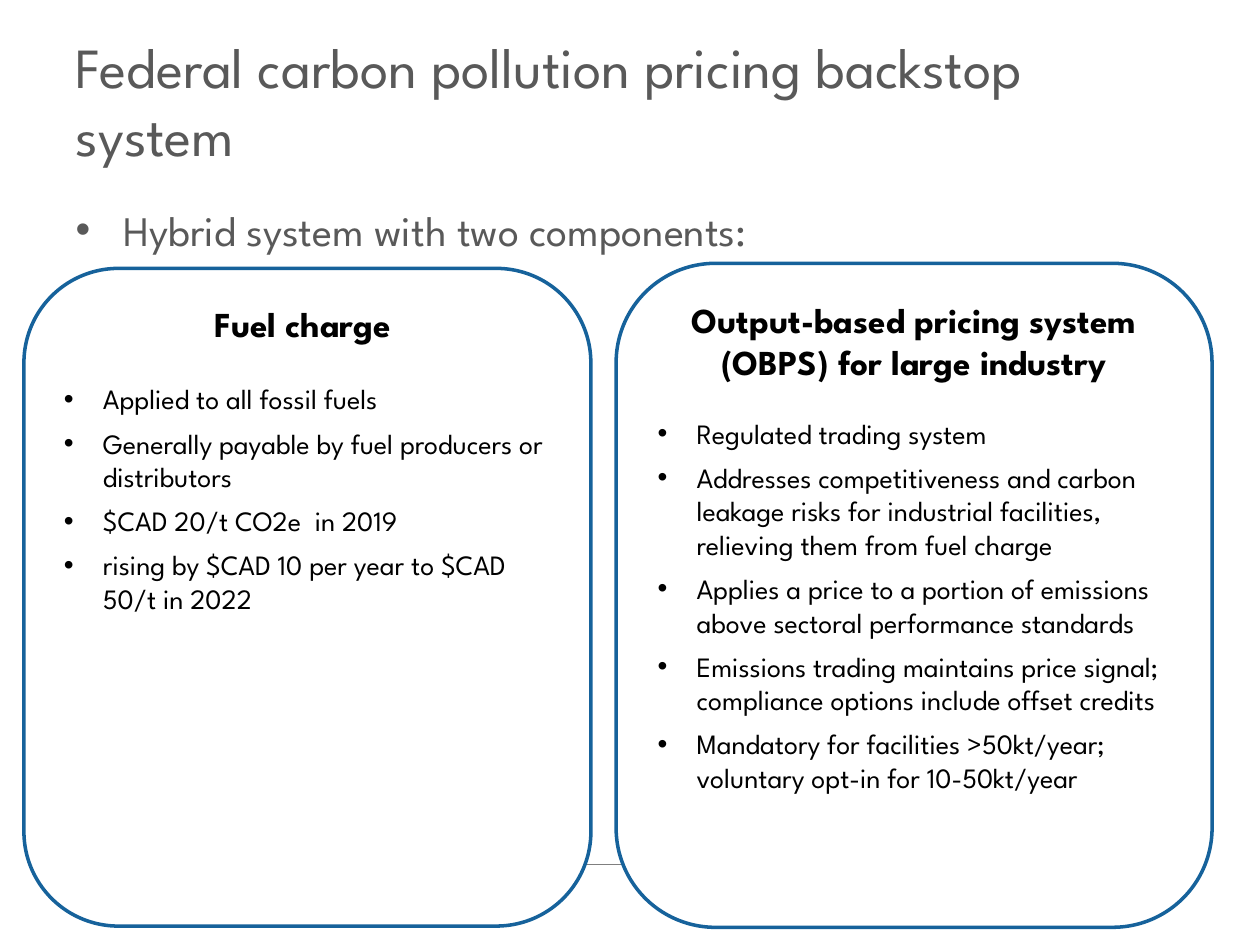
from lxml import etree
from pptx import Presentation
from pptx.dml.color import RGBColor
from pptx.enum.shapes import MSO_CONNECTOR as Link, MSO_SHAPE as Shape
from pptx.enum.text import MSO_ANCHOR as Anchor, MSO_AUTO_SIZE as Fit, PP_ALIGN as Align
from pptx.oxml.ns import qn
from pptx.util import Inches, Pt

FONT = "League Spartan"
GREY = RGBColor(0x59, 0x59, 0x59)
RULE = RGBColor(0x7F, 0x7F, 0x7F)
BLUE = RGBColor(0x16, 0x62, 0x9B)
BLACK = RGBColor(0, 0, 0)
WHITE = RGBColor(0xFF, 0xFF, 0xFF)


def style(para, size, color, bold=False, align=Align.LEFT):
    para.alignment = align
    font = para.font
    font.name, font.size, font.bold = FONT, Pt(size), bold
    font.color.rgb = color


def bullet(para, indent):
    props = para._p.get_or_add_pPr()
    props.set("marL", str(Inches(indent)))
    props.set("indent", str(-Inches(indent)))
    etree.SubElement(props, qn("a:buFont")).set("typeface", "Arial")
    etree.SubElement(props, qn("a:buChar")).set("char", "•")


prs = Presentation()
prs.slide_width, prs.slide_height = Inches(10), Inches(7.5)
slide = prs.slides.add_slide(prs.slide_layouts[1])
shapes = slide.shapes

title = shapes.title
title.left, title.top, title.width, title.height = map(Inches, (0.5, 0.3, 9, 1.08))
frame = title.text_frame
frame.text = "Federal carbon pollution pricing backstop system"
frame.auto_size = Fit.NONE
frame.vertical_anchor = Anchor.BOTTOM
style(frame.paragraphs[0], 32.4, GREY)

body = slide.placeholders[1]
body.left, body.top, body.width, body.height = map(Inches, (0.5, 1.57, 9, 5.13))
frame = body.text_frame
frame.text = "Hybrid system with two components:"
frame.auto_size = Fit.NONE
para = frame.paragraphs[0]
bullet(para, 0.38)
para.space_before = Pt(0)
style(para, 24, GREY)

rule = shapes.add_connector(Link.STRAIGHT, Inches(0.53), Inches(6.86), Inches(9.5), Inches(6.86))
rule.line.color.rgb = RULE
rule.line.width = Pt(0.25)
etree.SubElement(rule._element.spPr, qn("a:effectLst"))

cards = [
    ((0.19, 2.13, 4.5, 5.22), "Fuel charge ", 21.6, [
        "Applied to all fossil fuels",
        "Generally payable by fuel producers or distributors",
        "$CAD 20/t CO2e  in 2019",
        "rising by $CAD 10 per year to $CAD 50/t in 2022",
    ]),
    ((4.89, 2.09, 4.73, 5.27), "Output-based pricing system (OBPS) for large industry", 19.2, [
        "Regulated trading system",
        "Addresses competitiveness and carbon leakage risks for industrial facilities, "
        "relieving them from fuel charge",
        "Applies a price to a portion of emissions above sectoral performance standards",
        "Emissions trading maintains price signal; compliance options include offset credits",
        "Mandatory for facilities >50kt/year; voluntary opt-in for 10-50kt/year",
    ]),
]
for place, head, gap, points in cards:
    card = shapes.add_shape(Shape.ROUNDED_RECTANGLE, *map(Inches, place))
    card.shadow.inherit = False
    card.fill.solid()
    card.fill.fore_color.rgb = WHITE
    card.line.color.rgb = BLUE
    card.line.width = Pt(2)
    frame = card.text_frame
    frame.word_wrap = True
    frame.vertical_anchor = Anchor.TOP
    para = frame.paragraphs[0]
    para.text = head
    para.space_after = Pt(gap)
    style(para, 20, BLACK, True, Align.CENTER)
    for point in points:
        para = frame.add_paragraph()
        para.text = point
        bullet(para, 0.31)
        para.space_after = Pt(6)
        style(para, 16, BLACK)

prs.save("out.pptx")
